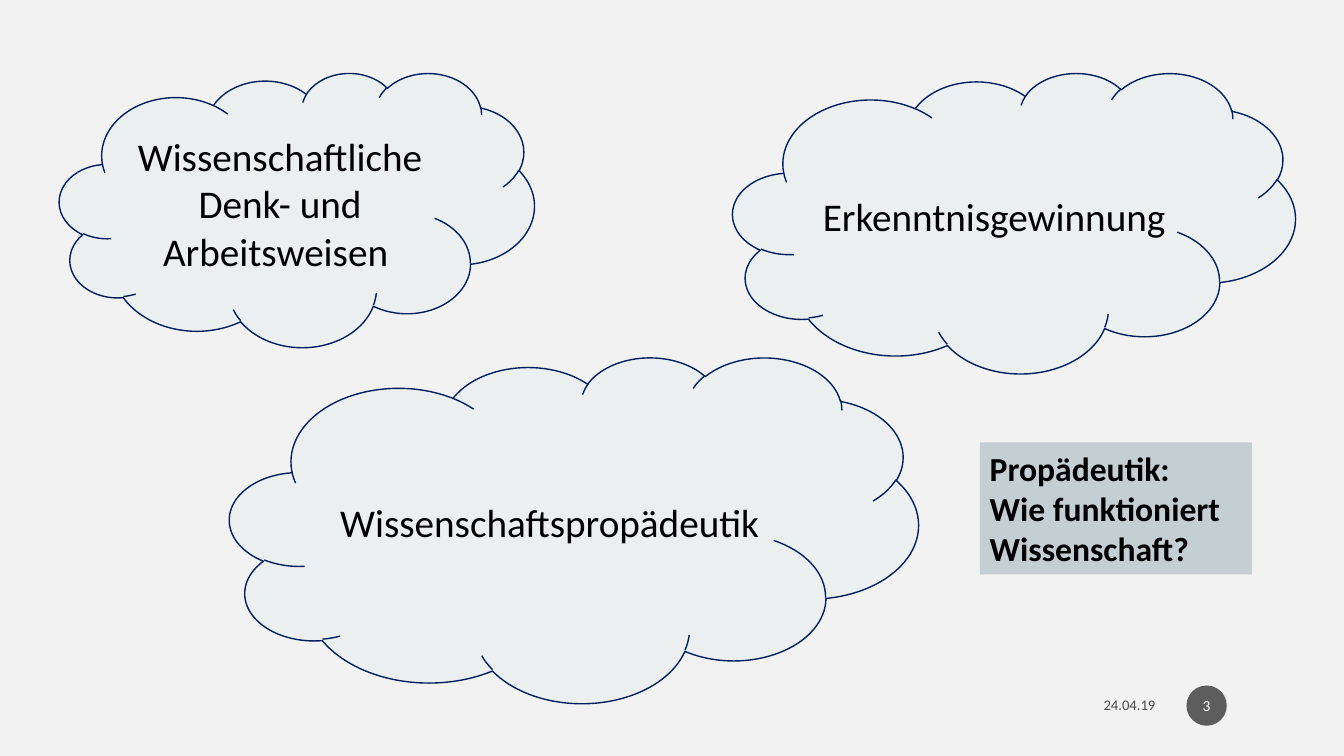
"""Build a slide with three clouds on scientific thinking and a short definition."""
from pptx import Presentation
from pptx import util as u
from pptx.dml.color import RGBColor
from pptx.enum import shapes, text

COLOURS = {
    "page": "F2F2F2",
    "cloud": "EBEFF0",
    "outline": "002060",
    "definition": "C3CFD3",
    "badge": "5D5D5D",
    "date": "494949",
    "black": "000000",
    "white": "FFFFFF",
}
SHAPE = shapes.MSO_SHAPE
ALIGN = text.PP_ALIGN

deck = Presentation()
deck.slide_width, deck.slide_height = u.Inches(13.33), u.Inches(7.5)
page = deck.slides.add_slide(deck.slide_layouts[6])
page.background.fill.solid()
page.background.fill.fore_color.rgb = RGBColor.from_string(COLOURS["page"])


def place(percent):
    """Turn left, top, width and height in percent of the slide into lengths."""
    sides = (deck.slide_width, deck.slide_height) * 2
    return [int(side * share / 100) for side, share in zip(sides, percent)]


def add_box(kind, percent, lines, size, fill=None, line=None, ink="black",
            align=ALIGN.CENTER, bold=False):
    """Add a shape with one paragraph per line of text."""
    box = page.shapes.add_shape(kind, *place(percent))
    box.shadow.inherit = False
    if fill:
        box.fill.solid()
        box.fill.fore_color.rgb = RGBColor.from_string(COLOURS[fill])
    else:
        box.fill.background()
    if line:
        box.line.color.rgb = RGBColor.from_string(COLOURS[line])
        box.line.width = u.Pt(1)
    else:
        box.line.fill.background()
    frame = box.text_frame
    frame.word_wrap = True
    frame.vertical_anchor = text.MSO_ANCHOR.MIDDLE
    frame.text = "\n".join(lines)
    for para in frame.paragraphs:
        para.alignment = align
        para.font.name = "Calibri"
        para.font.size = u.Pt(size)
        para.font.bold = bold
        para.font.color.rgb = RGBColor.from_string(COLOURS[ink])
    return box


add_box(SHAPE.RECTANGLE, (64.13, 90.93, 22.58, 4.67), ["24.04.19"], 10.5,
        ink="date", align=ALIGN.RIGHT)
badge = add_box(SHAPE.OVAL, (88.28, 90.67, 3, 5.33), ["3"], 11,
                fill="badge", ink="white")
badge.text_frame.margin_left = badge.text_frame.margin_right = u.Inches(0.02)

clouds = [
    ("Wissenschaftliche Denk- und Arbeitsweisen ", (4.43, 9.6, 35.33, 36.27)),
    ("Erkenntnisgewinnung", (54.53, 9.6, 41.85, 39.73)),
    ("Wissenschaftspropädeutik", (17.1, 47.2, 51.23, 45.73)),
]
for idea, percent in clouds:
    add_box(SHAPE.CLOUD, percent, [idea], 28, fill="cloud", line="outline")

definition = add_box(SHAPE.RECTANGLE, (72.9, 58.53, 20.25, 17.47),
                     ["Propädeutik:", "Wie funktioniert Wissenschaft?"], 24,
                     fill="definition", align=ALIGN.LEFT, bold=True)
definition.text_frame.vertical_anchor = text.MSO_ANCHOR.TOP
definition.text_frame.auto_size = text.MSO_AUTO_SIZE.SHAPE_TO_FIT_TEXT

deck.save("out.pptx")
